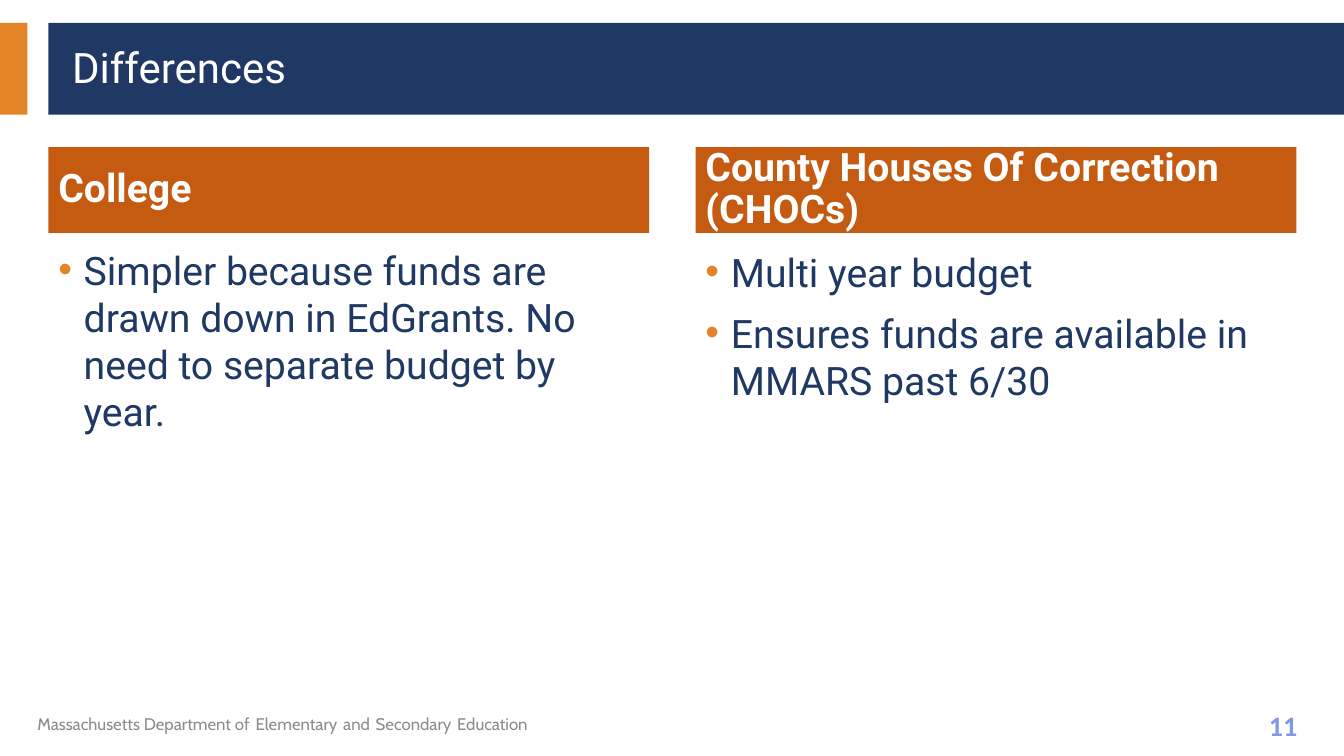
"""Build the "Differences" slide comparing College and CHOC budgets."""
from lxml.etree import SubElement
from pptx import Presentation
from pptx.dml.color import RGBColor
from pptx.enum.shapes import MSO_SHAPE
from pptx.enum.text import MSO_ANCHOR, PP_ALIGN
from pptx.oxml.ns import qn
from pptx.util import Cm, Pt

NAVY = RGBColor(0x20, 0x38, 0x64)
ORANGE = RGBColor(0xE3, 0x85, 0x26)
RUST = RGBColor(0xC5, 0x5A, 0x11)
WHITE = RGBColor(0xFF, 0xFF, 0xFF)
GRAY = RGBColor(0x8C, 0x8C, 0x8C)
BLACK = RGBColor(0x00, 0x00, 0x00)
PERIWINKLE = RGBColor(0x83, 0x97, 0xE7)

prs = Presentation()
prs.slide_width, prs.slide_height = Cm(33.87), Cm(19.05)
slide = prs.slides.add_slide(prs.slide_layouts[6])


def add_block(left, top, width, height, fill=None):
    if fill is None:
        block = slide.shapes.add_textbox(Cm(left), Cm(top), Cm(width), Cm(height))
    else:
        block = slide.shapes.add_shape(
            MSO_SHAPE.RECTANGLE, Cm(left), Cm(top), Cm(width), Cm(height))
        block.shadow.inherit = False
        block.fill.solid()
        block.fill.fore_color.rgb = fill
        block.line.fill.background()
    block.text_frame.word_wrap = True
    return block.text_frame


def add_run(paragraph, text, size, color, font="Roboto", bold=False):
    run = paragraph.add_run()
    run.text = text
    run.font.name = font
    run.font.size = Pt(size)
    run.font.bold = bold
    run.font.color.rgb = color


add_block(0, 0.58, 0.69, 2.31, ORANGE)
add_block(1.22, 0.58, 32.65, 2.31, NAVY)

title = add_block(1.57, 0.81, 31.75, 1.88)
title.vertical_anchor = MSO_ANCHOR.MIDDLE
title.paragraphs[0].line_spacing = 0.9
add_run(title.paragraphs[0], "Differences", 30, WHITE)

columns = [
    (1.22, 6.07, "College",
     ["Simpler because funds are drawn down in EdGrants. No need to separate budget by year."]),
    (17.53, 6.12, "County Houses Of Correction (CHOCs)",
     ["Multi year budget", "Ensures funds are available in MMARS past 6/30"]),
]
for left, points_top, heading, points in columns:
    heading_frame = add_block(left, 3.71, 15.14, 2.16, RUST)
    heading_frame.vertical_anchor = MSO_ANCHOR.MIDDLE
    heading_line = heading_frame.paragraphs[0]
    heading_line.alignment = PP_ALIGN.LEFT
    heading_line.line_spacing = 0.9
    add_run(heading_line, heading, 28, WHITE, bold=True)

    points_frame = add_block(left, points_top, 15.14, 10.54)
    for index, point in enumerate(points):
        point_line = points_frame.paragraphs[0] if index == 0 else points_frame.add_paragraph()
        if index:
            point_line.space_before = Pt(10)
        properties = point_line._p.get_or_add_pPr()
        properties.set("marL", str(Cm(0.64)))
        properties.set("indent", str(-Cm(0.64)))
        bullet_color = SubElement(properties, qn("a:buClr"))
        SubElement(bullet_color, qn("a:srgbClr"), val=str(ORANGE))
        SubElement(properties, qn("a:buFont"), typeface="Arial")
        SubElement(properties, qn("a:buChar"), char="•")
        add_run(point_line, point, 28, NAVY)

department = add_block(0.69, 17.65, 21.44, 1.02).paragraphs[0]
department_parts = ["Massachusetts Department of", "Elementary", "and", "Secondary", "Education"]
for index, part in enumerate(department_parts):
    if index:
        add_run(department, " ", 18, BLACK, "Cabin")
    add_run(department, part, 12, GRAY, "Cabin")

page_number = add_block(31.55, 17.73, 1.57, 1.12).paragraphs[0]
page_number.alignment = PP_ALIGN.CENTER
add_run(page_number, "11", 20, PERIWINKLE, "Calibri", bold=True)

prs.save("out.pptx")
